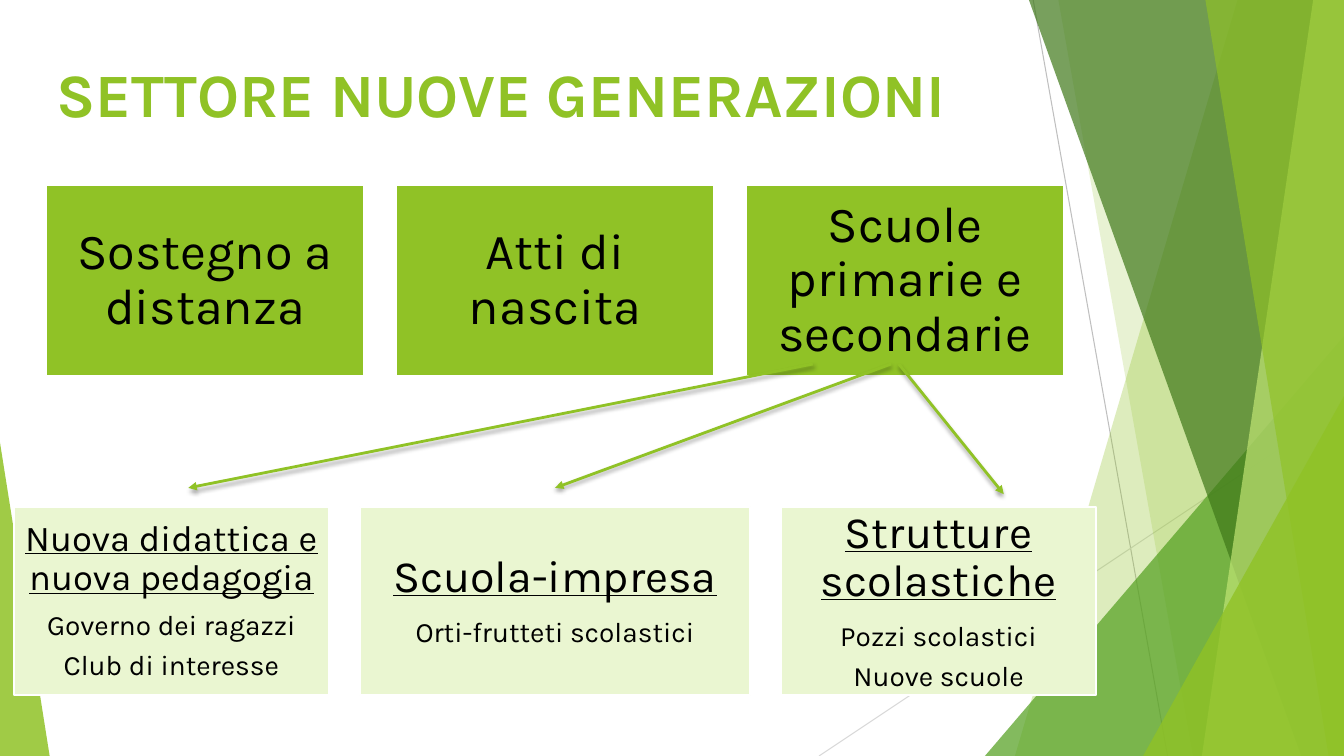
from lxml import etree
from pptx import Presentation
from pptx.dml.color import RGBColor
from pptx.enum.shapes import MSO_CONNECTOR, MSO_SHAPE
from pptx.enum.text import MSO_ANCHOR, MSO_AUTO_SIZE, PP_ALIGN
from pptx.oxml import parse_xml
from pptx.oxml.ns import nsdecls, qn
from pptx.util import Pt

RECTANGLE, TRIANGLE = MSO_SHAPE.RECTANGLE, MSO_SHAPE.ISOSCELES_TRIANGLE
STRAIGHT = MSO_CONNECTOR.STRAIGHT
TOP, MIDDLE = MSO_ANCHOR.TOP, MSO_ANCHOR.MIDDLE
LEFT, CENTER = PP_ALIGN.LEFT, PP_ALIGN.CENTER
NO_AUTOFIT = MSO_AUTO_SIZE.NONE

GREEN = RGBColor(0x90, 0xC2, 0x26)
MID_GREEN = RGBColor(0x54, 0xA0, 0x21)
DARK_GREEN = RGBColor(0x3F, 0x78, 0x19)
LIGHT_GREEN = RGBColor(0xC0, 0xE4, 0x74)
PALE_GREEN = RGBColor(0xEA, 0xF6, 0xD1)
GREY = RGBColor(0xBF, 0xBF, 0xBF)
PALE_GREY = RGBColor(0xD9, 0xD9, 0xD9)
WHITE = RGBColor(0xFF, 0xFF, 0xFF)
BLACK = RGBColor(0x00, 0x00, 0x00)
FONT = "Karla"
WIDTH, HEIGHT = 960, 540

prs = Presentation()
prs.slide_width, prs.slide_height = Pt(WIDTH), Pt(HEIGHT)
slide = prs.slides.add_slide(prs.slide_layouts[5])
shapes = slide.shapes


def add_line(start, end, color, weight):
    """Draw a straight line and return it with its empty effect list."""
    line = shapes.add_connector(STRAIGHT, *map(Pt, start + end))
    line.line.color.rgb = color
    line.line.width = Pt(weight)
    effects = etree.SubElement(line._element.spPr, qn("a:effectLst"))
    return line, effects


def add_box(left, top, width, height, fill, inset, lines):
    """Draw a white-edged box with centred (text, size, underline) lines."""
    box = shapes.add_shape(RECTANGLE, Pt(left), Pt(top), Pt(width), Pt(height))
    box.shadow.inherit = False
    box.fill.solid()
    box.fill.fore_color.rgb = fill
    box.line.color.rgb = WHITE
    box.line.width = Pt(1.5)
    frame = box.text_frame
    frame.word_wrap = True
    frame.vertical_anchor = MIDDLE
    for side in ("left", "top", "right", "bottom"):
        setattr(frame, f"margin_{side}", Pt(inset))
    for i, (text, size, underline) in enumerate(lines):
        paragraph = frame.add_paragraph() if i else frame.paragraphs[0]
        paragraph.alignment = CENTER
        paragraph.line_spacing = 0.9
        paragraph.space_after = Pt(0.35 * size)
        run = paragraph.add_run()
        run.text = text
        run.font.color.rgb = BLACK
        font_format = {"name": FONT, "size": Pt(size), "underline": underline}
        for key, value in font_format.items():
            setattr(run.font, key, value)


# Thin background lines
add_line((738, 0), (834, HEIGHT), GREY, 0.75)
add_line((WIDTH, 290), (585, HEIGHT), PALE_GREY, 0.75)

# Translucent facets: bands (top x, bottom x) reach the right edge,
# triangles (left, top, width, apex) stand on the bottom edge
facets = [
    ((884, 725), GREEN, 30),
    ((756, 852), GREEN, 20),
    ((703.5, 240, 256.5, 1), MID_GREEN, 72),
    ((735, 929.5), DARK_GREEN, 70),
    ((938, 858.5), LIGHT_GREEN, 70),
    ((861, 949), GREEN, 65),
    ((816.5, 283, 143.5, 1), GREEN, 80),
    ((0, 316, 35.5, 0), GREEN, 85),
]
for geometry, color, opacity in facets:
    if len(geometry) == 2:
        top_x, bottom_x = geometry
        outline = shapes.build_freeform(Pt(top_x), Pt(0))
        corners = [(WIDTH, 0), (WIDTH, HEIGHT), (bottom_x, HEIGHT)]
        outline.add_line_segments([(Pt(x), Pt(y)) for x, y in corners])
        facet = outline.convert_to_shape()
    else:
        left, top, width, apex = geometry
        facet = shapes.add_shape(TRIANGLE, Pt(left), Pt(top), Pt(width), Pt(HEIGHT - top))
        facet.adjustments[0] = apex
    facet.shadow.inherit = False
    facet.line.fill.background()
    facet.fill.solid()
    facet.fill.fore_color.rgb = color
    srgb = facet._element.spPr.find(qn("a:solidFill")).find(qn("a:srgbClr"))
    etree.SubElement(srgb, qn("a:alpha")).set("val", str(opacity * 1000))

# Title, in front of the facets
title = shapes.title
title.left, title.top, title.width, title.height = Pt(33), Pt(36), Pt(808.5), Pt(74)
title.text_frame.text = "SETTORE NUOVE GENERAZIONI"
title.text_frame.auto_size = NO_AUTOFIT
title.text_frame.vertical_anchor = TOP
heading = title.text_frame.paragraphs[0]
heading.alignment = LEFT
heading.font.color.rgb = GREEN
for key, value in {"name": FONT, "size": Pt(44), "bold": True}.items():
    setattr(heading.font, key, value)
shapes._spTree.append(title._element)

# Activities of the sector
activities = ["Sostegno a distanza", "Atti di nascita", "Scuole primarie e secondarie"]
for i, activity in enumerate(activities):
    add_box(33 + 250 * i, 132.5, 227, 136, GREEN, 10.8, [(activity, 36, False)])

# School projects
projects = [
    (10, 225, 8, 26, "Nuova didattica e nuova pedagogia",
     ["Governo dei ragazzi", "Club di interesse"]),
    (257, 279, 9.6, 32, "Scuola-impresa", ["Orti-frutteti scolastici"]),
    (558, 225, 9.6, 32, "Strutture scolastiche", ["Pozzi scolastici", "Nuove scuole"]),
]
for left, width, inset, size, project, details in projects:
    lines = [(project, size, True)] + [(detail, 20, False) for detail in details]
    add_box(left, 362, width, 134.5, PALE_GREEN, inset, lines)

# Arrows from the schools to their projects
arrows = [
    ((580.5, 260), (134.5, 348.5)),
    ((636.5, 260), (396.5, 348.5)),
    ((642, 260), (717, 353)),
]
for start, end in arrows:
    arrow, effects = add_line(start, end, GREEN, 2)
    etree.SubElement(arrow.line._get_or_add_ln(), qn("a:tailEnd")).set("type", "triangle")
    effects.append(parse_xml(
        f'<a:outerShdw {nsdecls("a")} blurRad="{Pt(3)}" dist="{Pt(2)}" dir="5400000" '
        'rotWithShape="0"><a:srgbClr val="000000"><a:alpha val="35000"/></a:srgbClr>'
        '</a:outerShdw>'))

prs.save("out.pptx")
